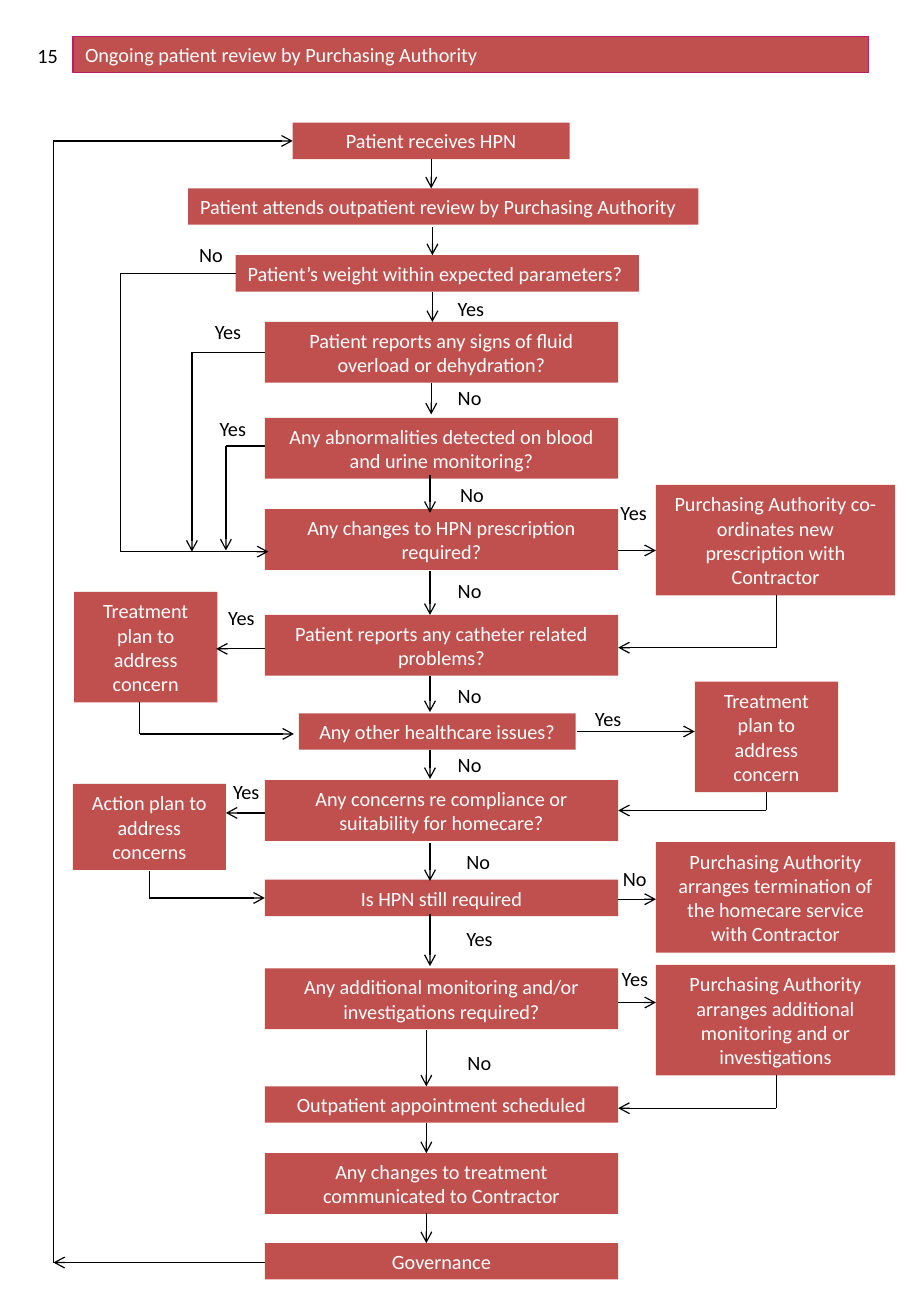
"""Build the flowchart slide for ongoing patient review of HPN homecare."""
from itertools import pairwise

from lxml import etree
from pptx import Presentation
from pptx.dml.color import RGBColor
from pptx.enum.shapes import MSO_CONNECTOR, MSO_SHAPE
from pptx.enum.text import MSO_ANCHOR, MSO_AUTO_SIZE, PP_ALIGN
from pptx.oxml.ns import qn
from pptx.util import Inches, Pt

RECTANGLE, STRAIGHT = MSO_SHAPE.RECTANGLE, MSO_CONNECTOR.STRAIGHT
MIDDLE, NO_RESIZE = MSO_ANCHOR.MIDDLE, MSO_AUTO_SIZE.NONE
LEFT, CENTER = PP_ALIGN.LEFT, PP_ALIGN.CENTER
RED, PURPLE, WHITE, BLACK = "C0504D", "B61F67", "FFFFFF", "000000"
ONE_LINE, TWO_LINES, THREE_LINES, FOUR_LINES = 0.3, 0.5, 0.71, 0.91
MAIN_LEFT, MAIN_WIDTH, MAIN_RIGHT = 2.18, 2.91, 5.09
SIDE_LEFT, SIDE_WIDTH, SIDE_CENTER = 5.4, 1.97, 6.39


def rgb(color):
    return RGBColor.from_string(color)


def write(shape, text, color, alignment, wrap):
    frame = shape.text_frame
    frame.word_wrap = wrap
    frame.auto_size = NO_RESIZE
    frame.vertical_anchor = MIDDLE
    paragraph = frame.paragraphs[0]
    paragraph.alignment = alignment
    run = paragraph.add_run()
    run.text = text
    run.font.name = "Calibri"
    run.font.size = Pt(12)
    run.font.color.rgb = rgb(color)


presentation = Presentation()
presentation.slide_width = Inches(7.5)
presentation.slide_height = Inches(10.83)
slide = presentation.slides.add_slide(presentation.slide_layouts[5])

title = slide.shapes.title
title.left, title.top = Inches(0.6), Inches(0.3)
title.width, title.height = Inches(6.55), Inches(ONE_LINE)
title.fill.solid()
title.fill.fore_color.rgb = rgb(RED)
title.line.color.rgb = rgb(PURPLE)
title.line.width = Pt(0.75)
write(title, "Ongoing patient review by Purchasing Authority", WHITE, LEFT, True)

main_steps = [
    (2.65, TWO_LINES, "Patient reports any signs of fluid overload or dehydration?"),
    (3.44, TWO_LINES, "Any abnormalities detected on blood and urine monitoring?"),
    (4.19, TWO_LINES, "Any changes to HPN prescription required?"),
    (5.06, TWO_LINES, "Patient reports any catheter related problems?"),
    (6.42, TWO_LINES, "Any concerns re compliance or suitability for homecare?"),
    (7.24, ONE_LINE, "Is HPN still required"),
    (7.97, TWO_LINES, "Any additional monitoring and/or investigations required?"),
    (8.94, ONE_LINE, "Outpatient appointment scheduled"),
    (9.49, TWO_LINES, "Any changes to treatment communicated to Contractor"),
    (10.23, ONE_LINE, "Governance"),
]
authority_actions = [
    (3.99, "Purchasing Authority co-ordinates new prescription with Contractor"),
    (6.93, "Purchasing Authority arranges termination of the homecare service with Contractor"),
    (7.94, "Purchasing Authority arranges additional monitoring and or investigations"),
]
boxes = [
    (2.41, 1.01, 2.28, ONE_LINE, "Patient receives HPN", CENTER),
    (1.55, 1.55, 4.2, ONE_LINE, "Patient attends outpatient review by Purchasing Authority", LEFT),
    (1.94, 2.1, 3.32, ONE_LINE, "Patient’s weight within expected parameters?", LEFT),
    (2.46, 5.87, 2.28, ONE_LINE, "Any other healthcare issues?", CENTER),
    (0.61, 4.87, 1.18, FOUR_LINES, "Treatment plan to address concern", CENTER),
    (5.72, 5.61, 1.18, FOUR_LINES, "Treatment plan to address concern", CENTER),
    (0.6, 6.45, 1.26, THREE_LINES, "Action plan to address concerns", CENTER),
]
boxes += [(MAIN_LEFT, top, MAIN_WIDTH, height, text, CENTER)
          for top, height, text in main_steps]
boxes += [(SIDE_LEFT, top, SIDE_WIDTH, FOUR_LINES, text, CENTER)
          for top, text in authority_actions]

for left, top, width, height, text, alignment in boxes:
    box = slide.shapes.add_shape(
        RECTANGLE, Inches(left), Inches(top), Inches(width), Inches(height))
    box.shadow.inherit = False
    box.fill.solid()
    box.fill.fore_color.rgb = rgb(RED)
    box.line.fill.background()
    write(box, text, WHITE, alignment, alignment == CENTER)

labels = [
    (0.21, 0.31, "15"),
    (1.54, 1.94, "No"), (3.67, 2.39, "Yes"), (1.67, 2.58, "Yes"),
    (3.67, 3.12, "No"), (1.71, 3.38, "Yes"), (3.69, 3.92, "No"),
    (5.01, 4.07, "Yes"), (3.67, 4.71, "No"), (1.78, 4.93, "Yes"),
    (3.67, 5.57, "No"), (4.8, 5.76, "Yes"), (3.67, 6.14, "No"),
    (1.82, 6.36, "Yes"), (3.74, 6.94, "No"), (5.03, 7.08, "No"),
    (3.74, 7.57, "Yes"), (5.02, 7.9, "Yes"), (3.75, 8.59, "No"),
]
for left, top, text in labels:
    label = slide.shapes.add_textbox(
        Inches(left), Inches(top), Inches(0.42), Inches(ONE_LINE))
    write(label, text, BLACK, LEFT, False)

down_arrows = [
    (3.55, 1.31, 1.55), (3.56, 1.87, 2.1), (3.56, 2.4, 2.65),
    (3.55, 3.15, 3.41), (3.54, 3.91, 4.22), (3.54, 4.7, 5.06),
    (3.54, 5.56, 5.86), (3.54, 6.17, 6.41), (3.54, 6.94, 7.25),
    (3.54, 7.52, 7.95), (3.51, 8.48, 8.94), (3.51, 9.24, 9.49),
    (3.51, 9.98, 10.23),
]
routes = [[(x, top), (x, bottom)] for x, top, bottom in down_arrows]
routes += [
    [(1.94, 2.25), (0.99, 2.25), (0.99, 4.54), (2.21, 4.54)],
    [(MAIN_LEFT, 2.9), (1.58, 2.9), (1.58, 4.54)],
    [(MAIN_LEFT, 3.67), (1.86, 3.67), (1.86, 4.53)],
    [(MAIN_RIGHT, 4.53), (SIDE_LEFT, 4.53)],
    [(SIDE_CENTER, 4.9), (SIDE_CENTER, 5.33), (MAIN_RIGHT, 5.33)],
    [(MAIN_LEFT, 5.34), (1.78, 5.34)],
    [(1.15, 5.78), (1.15, 6.04), (2.42, 6.04)],
    [(4.75, 6.02), (5.72, 6.02)],
    [(6.31, 6.52), (6.31, 6.67), (MAIN_RIGHT, 6.67)],
    [(MAIN_LEFT, 6.69), (1.86, 6.69)],
    [(1.23, 7.17), (1.23, 7.39), (MAIN_LEFT, 7.39)],
    [(MAIN_RIGHT, 7.4), (SIDE_LEFT, 7.4)],
    [(MAIN_RIGHT, 8.25), (SIDE_LEFT, 8.25)],
    [(SIDE_CENTER, 8.85), (SIDE_CENTER, 9.12), (MAIN_RIGHT, 9.12)],
    [(MAIN_LEFT, 10.39), (0.44, 10.39)],
    [(0.44, 10.39), (0.44, 1.16), (2.41, 1.16)],
]
for route in routes:
    for start, end in pairwise(route):
        connector = slide.shapes.add_connector(
            STRAIGHT, *[Inches(value) for value in start + end])
        connector.line.color.rgb = rgb(BLACK)
        connector.line.width = Pt(0.75)
        properties = connector.element.spPr
        etree.SubElement(properties, qn("a:effectLst"))
        if end == route[-1]:
            etree.SubElement(properties.find(qn("a:ln")), qn("a:tailEnd"),
                             type="arrow", w="med", len="med")

presentation.save("out.pptx")
